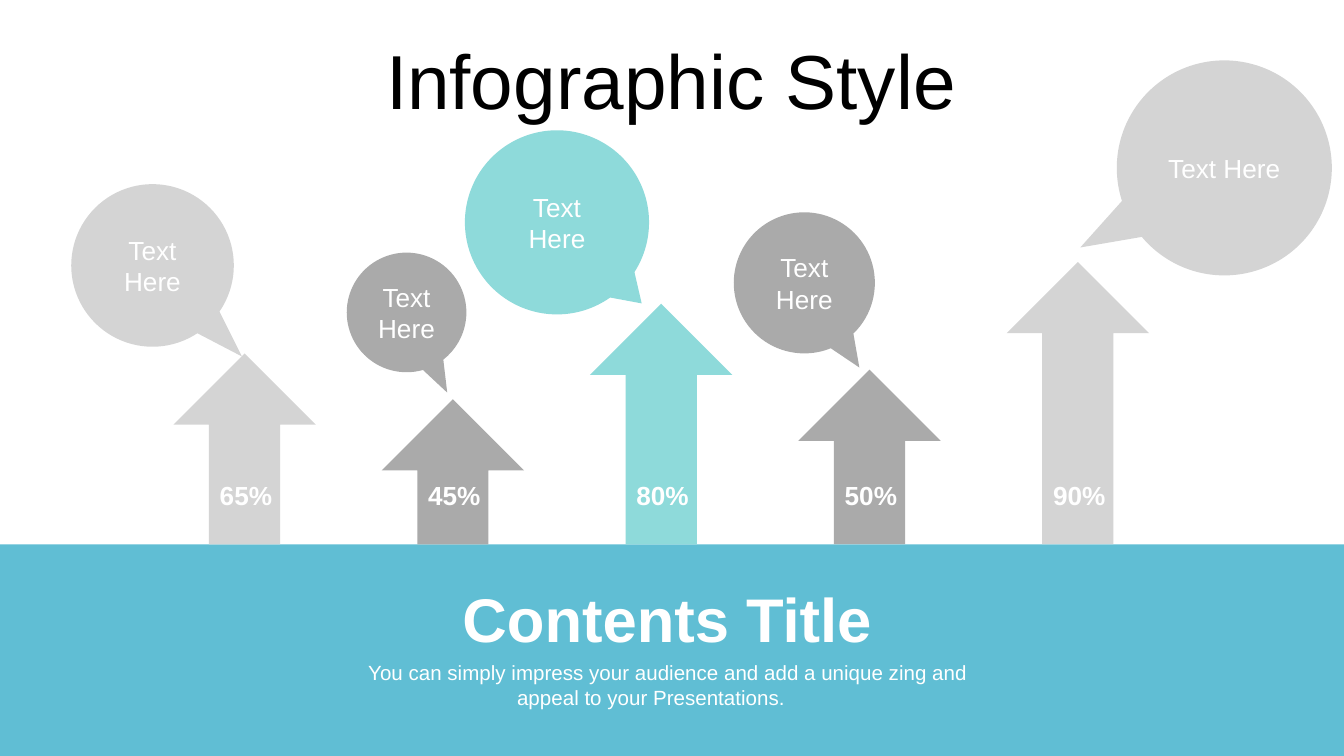
from dataclasses import dataclass

from pptx import Presentation
from pptx.dml.color import RGBColor
from pptx.enum.shapes import MSO_SHAPE
from pptx.enum.text import MSO_ANCHOR, MSO_AUTO_SIZE, PP_ALIGN
from pptx.util import Inches, Pt

COLORS = {
    "black": "000000",
    "white": "FFFFFF",
    "band": "60BED4",
    "light": "D4D4D4",
    "dark": "AAAAAA",
    "accent": "8EDADA",
}
BAND_TOP = 4.05
ARROW_LEFT, ARROW_STEP, ARROW_WIDTH = 1.29, 1.55, 1.06
LABEL_OFFSET = 0.25


@dataclass
class Bubble:
    left: float
    top: float
    size: float
    tail: tuple[float, float]


@dataclass
class Column:
    percent: int
    arrow_height: float
    color: str
    bubble: Bubble


COLUMNS = [
    Column(65, 1.42, "light", Bubble(0.53, 1.37, 1.21, (0.55, 0.56))),
    Column(45, 1.08, "dark", Bubble(2.58, 1.88, 0.89, (0.34, 0.67))),
    Column(80, 1.79, "accent", Bubble(3.46, 0.97, 1.37, (0.46, 0.44))),
    Column(50, 1.3, "dark", Bubble(5.46, 1.58, 1.05, (0.39, 0.6))),
    Column(90, 2.1, "light", Bubble(8.31, 0.45, 1.6, (-0.67, 0.37))),
]


def write(shape, text: str, size: float, color: str = "white", bold: bool = False,
          left_inset: float = 0.07, right_inset: float = 0.07):
    """Fill the shape with one centred paragraph and return that paragraph."""
    frame = shape.text_frame
    frame_format = {
        "word_wrap": True,
        "margin_left": Inches(left_inset),
        "margin_right": Inches(right_inset),
        "margin_top": Inches(0.04),
        "margin_bottom": Inches(0.04),
    }
    for name, value in frame_format.items():
        setattr(frame, name, value)
    para = frame.paragraphs[0]
    para.alignment = PP_ALIGN.CENTER
    span = para.add_run()
    span.text = text
    for name, value in {"name": "Arial", "size": Pt(size), "bold": bold}.items():
        setattr(span.font, name, value)
    span.font.color.rgb = RGBColor.from_string(COLORS[color])
    return para


def add_text(page, left: float, top: float, width: float, height: float,
             text: str, size: float, **text_format):
    box = page.shapes.add_textbox(Inches(left), Inches(top), Inches(width), Inches(height))
    para = write(box, text, size, **text_format)
    box.text_frame.auto_size = MSO_AUTO_SIZE.SHAPE_TO_FIT_TEXT
    return box, para


def add_filled(page, kind: MSO_SHAPE, left: float, top: float,
               width: float, height: float, color: str):
    shape = page.shapes.add_shape(kind, Inches(left), Inches(top), Inches(width), Inches(height))
    shape.shadow.inherit = False
    shape.fill.solid()
    shape.fill.fore_color.rgb = RGBColor.from_string(COLORS[color])
    shape.line.fill.background()
    return shape


def add_bubble(page, bubble: Bubble, color: str) -> None:
    shape = add_filled(page, MSO_SHAPE.OVAL_CALLOUT, bubble.left, bubble.top,
                       bubble.size, bubble.size, color)
    for index, value in enumerate(bubble.tail):
        shape.adjustments[index] = value
    write(shape, "Text Here", 14)
    shape.text_frame.vertical_anchor = MSO_ANCHOR.MIDDLE


def add_title(page) -> None:
    box, para = add_text(page, 0.25, 0.28, 9.49, 0.59, "Infographic Style", 41, color="black")
    box.text_frame.auto_size = MSO_AUTO_SIZE.NONE
    box.text_frame.vertical_anchor = MSO_ANCHOR.TOP
    para.line_spacing = 0.9
    para.space_before = Pt(7.5)


def add_band_text(page) -> None:
    insets = {"left_inset": 0, "right_inset": 0.06}
    add_text(page, 3.38, 4.28, 3.23, 0.63, "Contents Title", 33, bold=True, **insets)
    _, para = add_text(
        page, 2.41, 4.87, 4.93, 0.45,
        "You can simply impress your audience and add a unique zing and "
        "appeal to your Presentations.", 11, **insets)
    # The first line sits slightly to the right of the second.
    para._p.get_or_add_pPr().set("indent", str(Inches(0.25)))


def main() -> None:
    deck = Presentation()
    deck.slide_width = Inches(10)
    deck.slide_height = Inches(10 * 9 / 16)
    page = deck.slides.add_slide(deck.slide_layouts[6])

    add_title(page)
    add_filled(page, MSO_SHAPE.RECTANGLE, 0, BAND_TOP, 10, 10 * 9 / 16 - BAND_TOP, "band")
    add_band_text(page)
    for index, column in enumerate(COLUMNS):
        left = ARROW_LEFT + index * ARROW_STEP
        add_filled(page, MSO_SHAPE.UP_ARROW, left, BAND_TOP - column.arrow_height,
                   ARROW_WIDTH, column.arrow_height, column.color)
        add_bubble(page, column.bubble, column.color)
        add_text(page, left + LABEL_OFFSET, 3.53, 0.58, 0.31,
                 f"{column.percent}%", 14, bold=True)
    deck.save("out.pptx")


if __name__ == "__main__":
    main()
